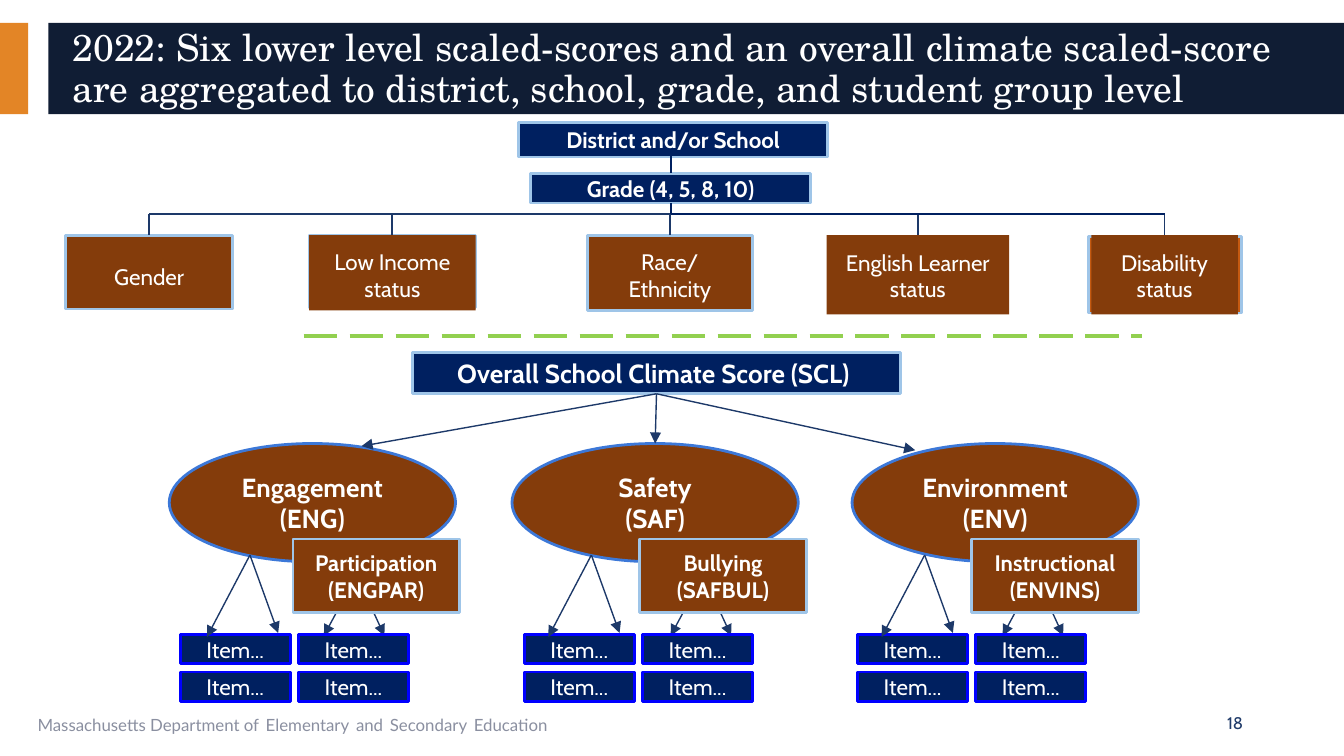
from lxml.etree import SubElement
from pptx import Presentation
from pptx.dml.color import RGBColor
from pptx.enum.dml import MSO_LINE
from pptx.enum.shapes import MSO_CONNECTOR, MSO_SHAPE
from pptx.enum.text import MSO_ANCHOR as ANCHOR, MSO_AUTO_SIZE, PP_ALIGN as ALIGN
from pptx.oxml.ns import qn
from pptx.util import Pt

PX = 9144  # 100 px to the inch
COLORS = {
    "white": "FFFFFF", "orange": "E38526", "banner": "101D34", "grey": "8A8FA0",
    "slate": "203B6A", "navy": "002060", "brown": "843C0B", "rust": "C55A11",
    "sky": "9FC5E8", "blue": "3C78D8", "bright": "0000FF", "ink": "1D3969",
    "green": "92D050",
}
TOP, BOTTOM = 0, 2  # connection sites


def px(*lengths):
    return [round(length * PX) for length in lengths]


def rgb(name):
    return RGBColor.from_string(COLORS[name])


def style(font, size=12, face="Cabin", color="white", bold=False):
    font.size, font.name, font.bold = Pt(size), face, bold
    font.color.rgb = rgb(color)


def write(box, text, align=ALIGN.CENTER, anchor=ANCHOR.MIDDLE, inset=(10, 10, 10, 10),
          spacing=None, **font):
    """Fill the box with one paragraph per line of text."""
    frame = box.text_frame
    frame.word_wrap, frame.auto_size = True, MSO_AUTO_SIZE.NONE
    frame.vertical_anchor = anchor
    (frame.margin_left, frame.margin_top,
     frame.margin_right, frame.margin_bottom) = px(*inset)
    for index, line in enumerate(text.split("\n")):
        para = frame.add_paragraph() if index else frame.paragraphs[0]
        para.alignment = align
        if spacing:
            para.line_spacing = spacing
        span = para.add_run()
        span.text = line
        style(span.font, **font)


def add_box(page, place, fill, outline=None, text=None, kind=MSO_SHAPE.RECTANGLE, **form):
    box = page.shapes.add_shape(kind, *px(*place))
    box.shadow.inherit = False
    box.fill.solid()
    box.fill.fore_color.rgb = rgb(fill)
    if outline:
        box.line.color.rgb = rgb(outline)
        box.line.width = Pt(1.5)
    else:
        box.line.fill.background()
    if text:
        write(box, text, **form)
    return box


def add_line(page, start, end, color="ink", width=1, arrow=False, dash=None,
             leave=None, reach=None):
    """Draw from start to end; leave and reach are (shape, site) to join."""
    line = page.shapes.add_connector(MSO_CONNECTOR.STRAIGHT, *px(*start, *end))
    if leave:
        line.begin_connect(*leave)
    if reach:
        line.end_connect(*reach)
    line.line.color.rgb = rgb(color)
    line.line.width = Pt(width)
    if dash:
        line.line.dash_style = dash
    properties = line.element.spPr
    if arrow:
        SubElement(properties.find(qn("a:ln")), qn("a:tailEnd"), type="triangle")
    SubElement(properties, qn("a:effectLst"))


def add_arrow(page, start, end, **joins):
    add_line(page, start, end, width=0.75, arrow=True, **joins)


def add_banner(page, top, height):
    add_box(page, (0, top, 21, height), "orange")
    add_box(page, (36, top, 964, height), "banner")
    title = page.shapes.title
    title.left, title.top, title.width, title.height = px(47, top + 7, 933, 56)
    # A no-break space follows "scaled-score"
    write(title, "2022: Six lower level scaled-scores and an overall climate scaled-score are "
          "aggregated to district, school, grade, and student group level",
          align=ALIGN.LEFT, inset=(7, 4, 7, 4), spacing=0.9, size=20,
          face="TeX Gyre Schola")
    title.element.getparent().append(title.element)  # bring in front of the bars


def add_footer(page, left, top):
    note = page.shapes.add_textbox(*px(left, top, 633, 30))
    frame = note.text_frame
    frame.word_wrap = True
    frame.margin_left, frame.margin_top, frame.margin_right, frame.margin_bottom = px(7, 4, 7, 4)
    para = frame.paragraphs[0]
    words = ["Massachusetts Department of", "Elementary", "and", "Secondary", "Education"]
    for index, word in enumerate(words):
        if index:
            gap = para.add_run()
            gap.text = " "
            style(gap.font, size=14, face="Lato", color="slate")
        span = para.add_run()
        span.text = word
        style(span.font, size=9, face="Lato", color="grey")
    number = page.shapes.add_textbox(*px(left + 882, top - 4, 29, 41))
    write(number, "18", align=ALIGN.RIGHT, inset=(7, 4, 7, 4), size=9, color="slate")


def add_reporting_levels(page, left, top):
    """District, grade and the five student groups below them."""
    add_box(page, (left + 337, top, 230, 26), "navy", "sky",
            "District and/or School", bold=True)
    grade = add_box(page, (left + 346, top + 38, 208, 22), "navy", "sky",
                    "Grade (4, 5, 8, 10)", bold=True)
    middle = left + 450
    add_line(page, (middle, top + 24), (middle, top + 38), "navy", reach=(grade, TOP))

    bus, row = top + 68, top + 84
    # Backing panels that show at the edges
    add_box(page, (left + 181, row, 124, 54), "rust", "sky")
    add_box(page, (left + 761, row + 1, 114, 57), "rust", "sky")
    groups = [  # offset, width, height, outline, top inset, label
        (0, 124, 55, "sky", 21, "Gender"),
        (181, 124, 56, None, 10, "Low Income status"),
        (388, 123, 56, "sky", 10, "Race/\nEthnicity"),
        (566, 136, 59, None, 10, "English Learner status"),
        (763, 109, 59, None, 10, "Disability\nstatus"),
    ]
    centers = []
    for offset, width, height, outline, inset, label in groups:
        group = add_box(page, (left + offset, row, width, height), "brown", outline, label,
                        anchor=ANCHOR.TOP, inset=(10, inset, 10, 10))
        center = left + offset + width / 2
        add_line(page, (center, bus), (center, row), reach=(group, TOP))
        centers.append(center)
    add_line(page, (centers[0], bus), (middle, bus))
    add_line(page, (middle, bus), (centers[-1], bus), "navy")
    add_line(page, (middle, bus), (middle, bus), "navy", leave=(grade, BOTTOM))


def add_domain(page, left, top, name, badge_text, badge_left, items_left, stem):
    """One climate domain: ellipse, subdomain badge and four items."""
    for start, end in ((43, 23), (51, 68)):
        add_arrow(page, (badge_left + start, top + 106), (badge_left + end, top + 143))
    for column in range(2):
        for row in range(2):
            add_box(page, (items_left + 88 * column, top + 142 + 28 * row, 82, 22),
                    "navy", "bright", "Item...")
    ellipse = add_box(page, (left, top, 213, 88), "brown", "blue", name,
                      kind=MSO_SHAPE.OVAL, size=14, bold=True)
    add_box(page, (badge_left, top + 71, 124, 55), "brown", "sky", badge_text, bold=True)
    for reach, drop in ((-32, 144), (21, 141)):
        add_arrow(page, (stem, top + 83), (stem + reach, top + drop))
    return ellipse


def add_climate_scores(page, left, top):
    """Overall score and its three domains."""
    score = add_box(page, (left + 181, top, 363, 31), "navy", "sky",
                    "Overall School Climate Score (SCL) ", size=14, bold=True)
    row = top + 68
    add_domain(page, left, row, "Engagement (ENG)", "Participation\n(ENGPAR)",
               left + 92, left + 8, left + 60)
    safety = add_domain(page, left + 255, row, "Safety\n(SAF)", "Bullying\n(SAFBUL)",
                        left + 350, left + 264, left + 314)
    add_domain(page, left + 508, row, "Environment (ENV)", "Instructional\n(ENVINS)",
               left + 597, left + 512, left + 562)
    add_arrow(page, (0, 0), (left + 143, row + 2), leave=(score, BOTTOM))
    add_arrow(page, (0, 0), (0, 0), leave=(score, BOTTOM), reach=(safety, TOP))
    add_arrow(page, (0, 0), (left + 555, row + 5), leave=(score, BOTTOM))


def main():
    deck = Presentation()
    deck.slide_width = 1000 * PX
    deck.slide_height = deck.slide_width * 9 // 16
    page = deck.slides.add_slide(deck.slide_layouts[5])
    add_banner(page, 17, 68)
    add_footer(page, 21, 521)
    # Divider between reporting levels and scores
    add_line(page, (226, 250), (850, 250), "green", 2.25, dash=MSO_LINE.LONG_DASH)
    add_reporting_levels(page, 49, 91)
    add_climate_scores(page, 126, 262)
    deck.save("out.pptx")


if __name__ == "__main__":
    main()
